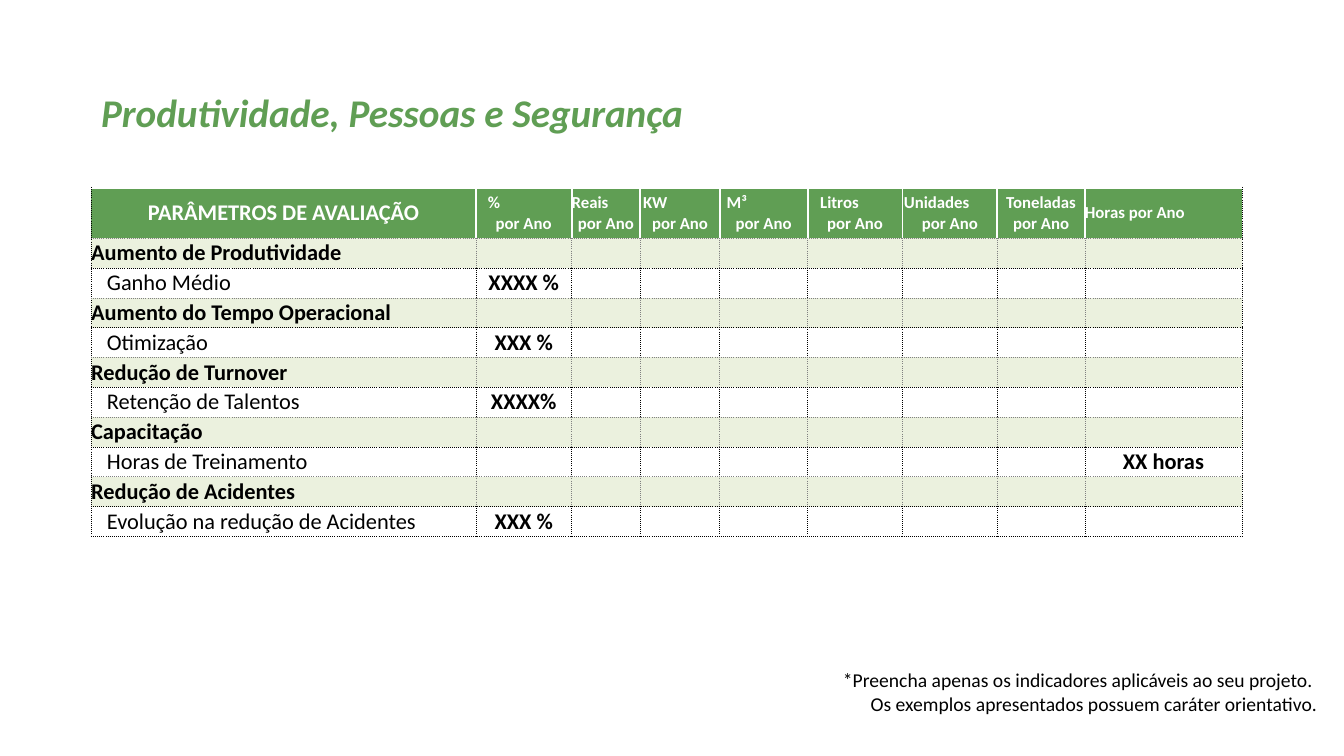
import dataclasses

import lxml.etree
import pptx
import pptx.dml.color
import pptx.enum.text
import pptx.oxml.ns
import pptx.util

Pt = pptx.util.Pt
Align = pptx.enum.text.PP_ALIGN
Anchor = pptx.enum.text.MSO_ANCHOR


@dataclasses.dataclass(frozen=True)
class Theme:
    face: str = "Calibri"
    green: str = "609E54"
    pale: str = "EBF1DE"
    white: str = "FFFFFF"
    black: str = "000000"
    gray: str = "808080"
    title: int = 28
    body: int = 16
    note: int = 14
    head: int = 12


# Unit and the left margin of its line; None keeps the label in one line.
UNITS = [("%", 8.5), ("Reais", 0), ("KW", 2), ("M³", 5), ("Litros", 9),
         ("Unidades", 1), ("Toneladas por Ano", None), ("Horas por Ano", None)]
WIDTHS = [274.8, 68.4, 49.1, 56.7, 62.8, 67.8, 67.8, 62.5, 112.3]
HEAD_HIGH, ROW_HIGH = 36, 21.3
INDENT = 11.3

# Group, its measure, the value and the column of the value.
GROUPS = [
    ("Aumento de Produtividade", "Ganho Médio", "XXXX %", 1),
    ("Aumento do Tempo Operacional", "Otimização", "XXX %", 1),
    ("Redução de Turnover", "Retenção de Talentos", "XXXX%", 1),
    ("Capacitação", "Horas de Treinamento", "XX horas", 8),
    ("Redução de Acidentes", "Evolução na redução de Acidentes", "XXX %", 1),
]


class Page:
    def __init__(self, slide, theme):
        self.slide = slide
        self.theme = theme

    def style(self, para, size, color, bold=False, italic=False, align=Align.LEFT):
        para.alignment = align
        font = para.font
        font.name, font.size = self.theme.face, Pt(size)
        font.bold, font.italic = bold, italic
        font.color.rgb = pptx.dml.color.RGBColor.from_string(color)

    def text(self, left, top, width, height, words, size, color, **look):
        box = self.slide.shapes.add_textbox(Pt(left), Pt(top), Pt(width), Pt(height))
        box.text_frame.word_wrap = True
        para = box.text_frame.paragraphs[0]
        para.text = words
        self.style(para, size, color, **look)
        return para

    def table(self, left, top, widths, heights):
        frame = self.slide.shapes.add_table(
            len(heights), len(widths), Pt(left), Pt(top),
            Pt(sum(widths)), Pt(sum(heights)))
        grid = frame.table
        grid.first_row = grid.horz_banding = False
        for col, width in zip(grid.columns, widths):
            col.width = Pt(width)
        for row, height in zip(grid.rows, heights):
            row.height = Pt(height)
        return grid

    def edge(self, cell, side, color, width, dash):
        props = cell._tc.get_or_add_tcPr()
        tag = pptx.oxml.ns.qn
        line = lxml.etree.SubElement(props, tag("a:ln" + side), w=str(Pt(width)))
        fill = lxml.etree.SubElement(line, tag("a:solidFill"))
        lxml.etree.SubElement(fill, tag("a:srgbClr"), val=color)
        lxml.etree.SubElement(line, tag("a:prstDash"), val=dash)

    def cell(self, cell, fill, edges, indent=0):
        """Edges map each side, in the order L, R, T, B, to a line."""
        for side, line in edges.items():
            self.edge(cell, side, *line)
        cell.fill.solid()
        cell.fill.fore_color.rgb = pptx.dml.color.RGBColor.from_string(fill)
        cell.margin_left = Pt(indent)
        cell.margin_right = cell.margin_top = cell.margin_bottom = 0
        cell.vertical_anchor = Anchor.MIDDLE

    def label(self, cell, words, size, color, **look):
        para = cell.text_frame.paragraphs[0]
        para.text = words
        self.style(para, size, color, **look)
        if not words:
            lxml.etree.SubElement(
                para._p, pptx.oxml.ns.qn("a:endParaRPr"), sz=str(size * 100))
        return para

    def unit(self, cell, name, margin, align):
        """Sets a heading; with a margin, "por Ano" is centred below it."""
        look = dict(size=self.theme.head, color=self.theme.white, bold=True)
        para = self.label(cell, name, align=align, **look)
        if margin is not None:
            para._p.get_or_add_pPr().set("marL", str(Pt(margin)))
            below = cell.text_frame.add_paragraph()
            below.text = "por Ano"
            self.style(below, align=Align.CENTER, **look)


def edges(theme, row, col, rows, cols):
    solid = (theme.white, 1.5, "solid")
    dark = (theme.black, 0.5, "sysDot")
    soft = (theme.gray, 0.5, "sysDot")
    head, group = row == 0, row % 2 == 1
    inner = solid if head else soft if group else dark
    return {
        "L": dark if col == 0 else inner,
        "R": dark if col == cols - 1 else inner,
        "T": solid if head else soft if group else dark,
        "B": dark if group or row == rows - 1 else soft,
    }


def main():
    deck = pptx.Presentation()
    deck.slide_width, deck.slide_height = Pt(960), Pt(540)
    theme = Theme()
    page = Page(deck.slides.add_slide(deck.slide_layouts[6]), theme)

    heights = [HEAD_HIGH] + [ROW_HIGH] * (2 * len(GROUPS))
    grid = page.table(65.1, 134.2, WIDTHS, heights)
    rows, cols = len(heights), len(WIDTHS)
    for row in range(rows):
        detail = row > 0 and row % 2 == 0
        fill = theme.green if row == 0 else theme.white if detail else theme.pale
        for col in range(cols):
            page.cell(grid.cell(row, col), fill,
                      edges(theme, row, col, rows, cols),
                      INDENT if detail and col == 0 else 0)

    page.label(grid.cell(0, 0), "PARÂMETROS DE AVALIAÇÃO", theme.body,
               theme.white, bold=True, align=Align.CENTER)
    for col, (name, margin) in enumerate(UNITS, 1):
        middle = margin is None and col < cols - 1
        page.unit(grid.cell(0, col), name, margin,
                  Align.CENTER if middle else Align.LEFT)

    for index, (group, measure, value, place) in enumerate(GROUPS):
        row = 2 * index + 1
        page.label(grid.cell(row, 0), group, theme.body, theme.black, bold=True)
        page.label(grid.cell(row + 1, 0), measure, theme.body, theme.black)
        for col in range(1, cols):
            page.label(grid.cell(row, col), "", theme.body, theme.black)
            page.label(grid.cell(row + 1, col), value if col == place else "",
                       theme.body, theme.black, bold=True, align=Align.CENTER)

    title = page.text(65.1, 54.7, 777, 44, "Produtividade, Pessoas e Segurança",
                      theme.title, theme.green, bold=True, italic=True)
    title.line_spacing = 1.15
    page.text(468, 473.8, 480.2, 41,
              "*Preencha apenas os indicadores aplicáveis ao seu projeto. \n"
              "Os exemplos apresentados possuem caráter orientativo.",
              theme.note, theme.black, align=Align.RIGHT)
    deck.save("out.pptx")


if __name__ == "__main__":
    main()
